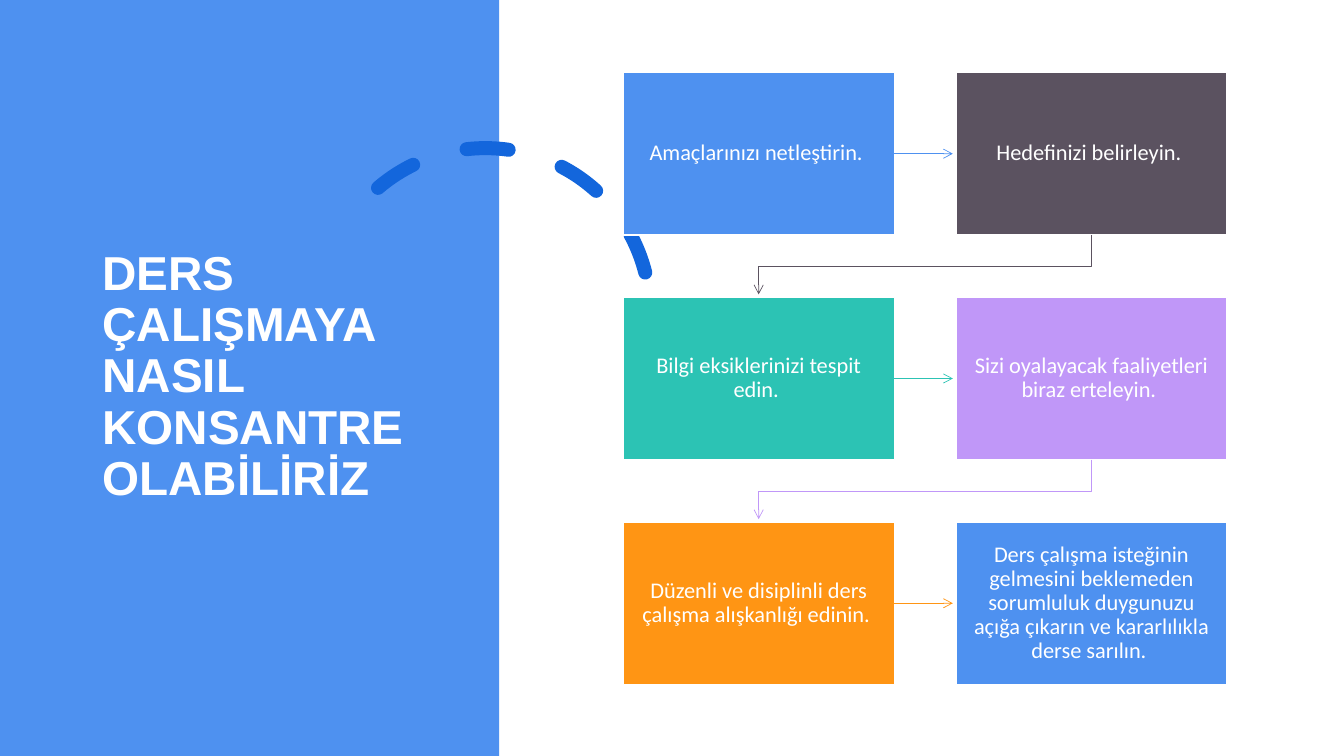
from dataclasses import dataclass

from lxml.etree import SubElement
from pptx import Presentation
from pptx.dml.color import RGBColor
from pptx.enum.dml import MSO_LINE
from pptx.enum.shapes import MSO_CONNECTOR, MSO_SHAPE
from pptx.enum.text import MSO_ANCHOR, PP_ALIGN
from pptx.oxml.ns import qn
from pptx.util import Inches, Pt


@dataclass(frozen=True)
class Theme:
    white: str = "FFFFFF"
    blue: str = "4E91F0"
    deep_blue: str = "1366DC"
    slate: str = "5B5260"
    teal: str = "2CC3B4"
    violet: str = "C097F8"
    orange: str = "FF9514"
    title_font: str = "Arial"
    body_font: str = "Calibri"
    title_size: int = 34
    body_size: int = 16


@dataclass(frozen=True)
class Box:
    left: float
    top: float
    width: float
    height: float

    def lengths(self):
        return [Inches(value) for value in (self.left, self.top, self.width, self.height)]


THEME = Theme()
STEPS = [
    ("Amaçlarınızı netleştirin. ", THEME.blue),
    ("Hedefinizi belirleyin. ", THEME.slate),
    ("Bilgi eksiklerinizi tespit edin. ", THEME.teal),
    ("Sizi oyalayacak faaliyetleri biraz erteleyin. ", THEME.violet),
    ("Düzenli ve disiplinli ders çalışma alışkanlığı edinin. ", THEME.orange),
    ("Ders çalışma isteğinin gelmesini beklemeden sorumluluk duygunuzu "
     "açığa çıkarın ve kararlılıkla derse sarılın. ", THEME.blue),
]


def apply_format(target, values):
    for name, value in values.items():
        setattr(target, name, value)


def set_line(shape, color, width):
    shape.line.color.rgb = RGBColor.from_string(color)
    shape.line.width = Pt(width)


def add_rectangle(slide, box, color):
    shape = slide.shapes.add_shape(MSO_SHAPE.RECTANGLE, *box.lengths())
    shape.shadow.inherit = False
    shape.fill.solid()
    shape.fill.fore_color.rgb = RGBColor.from_string(color)
    shape.line.fill.background()
    return shape


def write_text(shape, lines, frame_format, paragraph_format, font_format):
    apply_format(shape.text_frame, {
        "word_wrap": True, "vertical_anchor": MSO_ANCHOR.MIDDLE, **frame_format})
    paragraph = shape.text_frame.paragraphs[0]
    apply_format(paragraph, {"line_spacing": 0.9, **paragraph_format})
    for index, line in enumerate(lines):
        if index:
            paragraph.add_line_break()
        run = paragraph.add_run()
        run.text = line
        apply_format(run.font, font_format)
        run.font.color.rgb = RGBColor.from_string(THEME.white)


def add_arrowhead(shape):
    SubElement(shape.line._get_or_add_ln(), qn("a:tailEnd"), type="arrow")


def add_title_panel(slide, box):
    add_rectangle(slide, box, THEME.blue)
    title_box = Box(box.left + 0.92, box.top + 0.7, 3.23, 6.09)
    title = slide.shapes.add_textbox(*title_box.lengths())
    write_text(
        title, ["DERS ÇALIŞMAYA ", "NASIL KONSANTRE OLABİLİRİZ"], {},
        {"alignment": PP_ALIGN.LEFT},
        {"name": THEME.title_font, "size": Pt(THEME.title_size), "bold": True})


def add_dashed_arc(slide, box):
    arc = slide.shapes.add_shape(MSO_SHAPE.ARC, *box.lengths())
    arc.shadow.inherit = False
    arc.fill.background()
    arc.rotation = 345.8
    arc.adjustments[0] = 146.13
    arc.adjustments[1] = 0
    set_line(arc, THEME.deep_blue, 10)
    arc.line.dash_style = MSO_LINE.DASH
    arc.line._get_or_add_ln().set("cap", "rnd")


def add_step(slide, box, text, color):
    step = add_rectangle(slide, box, color)
    set_line(step, THEME.white, 1)
    margins = {"margin_left": Inches(0.13), "margin_right": Inches(0.13),
               "margin_top": Inches(0.14), "margin_bottom": Inches(0.14)}
    write_text(
        step, [text], margins,
        {"alignment": PP_ALIGN.CENTER, "space_after": Pt(5.6)},
        {"name": THEME.body_font, "size": Pt(THEME.body_size)})
    return step


def add_row_arrow(slide, step, box, length, color):
    right = box.left + box.width
    middle = box.top + box.height / 2
    arrow = slide.shapes.add_connector(
        MSO_CONNECTOR.STRAIGHT,
        Inches(right), Inches(middle), Inches(right + length), Inches(middle))
    arrow.begin_connect(step, 3)
    set_line(arrow, color, 0.5)
    add_arrowhead(arrow)
    SubElement(arrow._element.spPr, qn("a:effectLst"))


def add_return_arrow(slide, box, target_x, drop, color):
    start_x = box.left + box.width / 2
    start_y = box.top + box.height
    turn_y = start_y + 0.31
    builder = slide.shapes.build_freeform(Inches(start_x), Inches(start_y))
    points = [(start_x, turn_y), (target_x, turn_y), (target_x, start_y + drop)]
    builder.add_line_segments([(Inches(x), Inches(y)) for x, y in points], close=False)
    arrow = builder.convert_to_shape()
    arrow.shadow.inherit = False
    arrow.fill.background()
    set_line(arrow, color, 0.5)
    add_arrowhead(arrow)


def add_step_grid(slide, box):
    columns, rows = 2, 3
    width, height = 2.69, 1.61
    column_step = (box.width - width) / (columns - 1)
    row_step = (box.height - height) / (rows - 1)
    for index, (text, color) in enumerate(STEPS):
        row, column = divmod(index, columns)
        step_box = Box(box.left + column * column_step,
                       box.top + row * row_step, width, height)
        step = add_step(slide, step_box, text, color)
        if column < columns - 1:
            add_row_arrow(slide, step, step_box, column_step - width - 0.03, color)
        elif row < rows - 1:
            add_return_arrow(slide, step_box, box.left + width / 2,
                             row_step - height - 0.03, color)


def main():
    presentation = Presentation()
    presentation.slide_width = Inches(13.33)
    presentation.slide_height = Inches(7.5)
    slide = presentation.slides.add_slide(presentation.slide_layouts[6])
    add_title_panel(slide, Box(0, 0, 4.95, 7.5))
    add_dashed_arc(slide, Box(3.18, 1.47, 3.27, 3.27))
    add_step_grid(slide, Box(6.18, 0.72, 5.99, 6.07))
    presentation.save("out.pptx")


if __name__ == "__main__":
    main()
